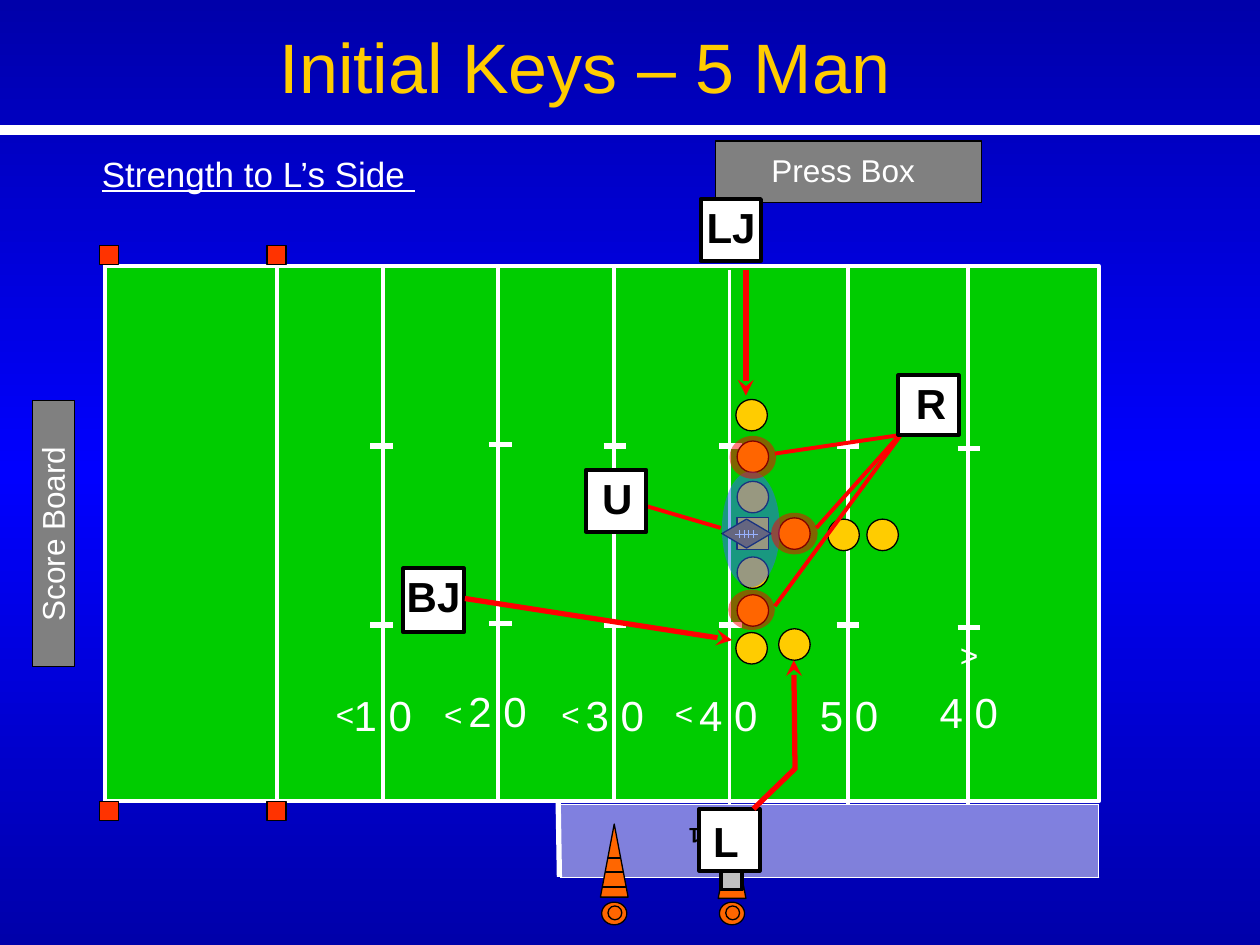
import copy

import pptx
import pptx.dml.color
import pptx.enum.dml
import pptx.enum.shapes
import pptx.enum.text
import pptx.oxml.ns
import pptx.util
from lxml import etree

SHAPE = pptx.enum.shapes.MSO_SHAPE
ALIGN = pptx.enum.text.PP_ALIGN
WHITE, BLACK, RED, GRAY = "FFFFFF", "000000", "FF0000", "808080"
GOLD, ORANGE, PYLON, GREEN = "FFCC00", "FF6600", "FF3300", "00CC00"
BLUE, BALL, SILVER = "3366FF", "996600", "C0C0C0"

BACKGROUND = [(0, "0000AA"), (0.5, "0000FF"), (1, "0000AA")]
FIELD = (0.83, 2.11, 7.89, 4.25)
YARD_LINES = [(2.2, 2.11), (3.04, 2.11), (3.95, 2.11), (4.87, 2.11),
              (5.79, 2.14), (6.73, 2.13), (7.68, 2.13)]
YARD_NUMBERS = [("1 0", 2.61, 5.42), ("2 0", 3.52, 5.39), ("3 0", 4.45, 5.42),
                ("4 0", 5.35, 5.42), ("5 0", 6.31, 5.42), ("4 0", 7.26, 5.4)]
HASH_MARKS = [(2.94, 3.54), (3.88, 3.53), (4.79, 3.54),
              (5.71, 3.54), (6.64, 3.54), (7.6, 3.56)]
DIRECTION_MARKS = [(2.56, 5.47, 0), (3.42, 5.47, 0), (4.35, 5.47, 0),
                   (5.25, 5.46, 0), (7.52, 5.03, 180)]
CONES = [(5.81, 6.55, (6.93, 7.04)), (4.875, 6.54, (6.81, 6.92, 7.04))]
OFFICIALS = [("U", (4.65, 3.73, 0.48, 0.49), (4.68, 3.7)),
             (" L", (5.55, 6.42, 0.48, 0.49), (5.47, 6.42)),
             ("LJ", (5.56, 1.58, 0.48, 0.49), (5.51, 1.55)),
             ("BJ", (3.2, 4.51, 0.48, 0.51), (3.13, 4.48)),
             ("R", (7.13, 2.98, 0.48, 0.47), (7.17, 2.95))]
PLAYERS = [(5.85, 3.82), (5.85, 3.5), (5.85, 4.42), (5.85, 4.72), (6.18, 4.11),
           (6.18, 4.99), (5.84, 5.02), (5.84, 3.17), (6.88, 4.12), (6.57, 4.12)]
KEY_AREAS = [((5.78, 4.68, 0.37, 0.32), RED), ((5.73, 3.74, 0.46, 0.92), BLUE),
             ((5.79, 3.46, 0.37, 0.34), RED), ((6.12, 4.07, 0.37, 0.33), RED)]
KEY_LINES = [((6.15, 4.81), (7.16, 3.44)), ((6.48, 4.19), (7.15, 3.44)),
             ((5.14, 4.02), (5.72, 4.19)), ((6.15, 3.6), (7.16, 3.45))]
KEY_ARROWS = [((3.69, 4.75), (5.81, 5.08)), ((6.31, 6.11), (6.3, 5.24)),
              ((5.92, 2.14), (5.92, 3.14))]


def color(hex_code):
    return pptx.dml.color.RGBColor.from_string(hex_code)


def inches(*values):
    return [pptx.util.Cm(value * 2.54) for value in values]


def add_box(kind, box, fill, line=BLACK, width=0.75, alpha=None):
    shape = slide.shapes.add_shape(kind, *inches(*box))
    shape.shadow.inherit = False
    if fill:
        shape.fill.solid()
        shape.fill.fore_color.rgb = color(fill)
    else:
        shape.fill.background()
    if alpha:
        fill_color = shape.element.spPr.find(".//" + pptx.oxml.ns.qn("a:srgbClr"))
        etree.SubElement(fill_color, pptx.oxml.ns.qn("a:alpha"), val=str(alpha * 1000))
    if line:
        shape.line.color.rgb = color(line)
        shape.line.width = pptx.util.Pt(width)
    else:
        shape.line.fill.background()
    return shape


def add_line(start, end, line=WHITE, width=2.25, arrow=False):
    connector = slide.shapes.add_connector(
        pptx.enum.shapes.MSO_CONNECTOR.STRAIGHT, *inches(*start, *end))
    connector.line.color.rgb = color(line)
    connector.line.width = pptx.util.Pt(width)
    if arrow:
        outline = connector.element.spPr.find(pptx.oxml.ns.qn("a:ln"))
        etree.SubElement(outline, pptx.oxml.ns.qn("a:tailEnd"), type="stealth")
    etree.SubElement(connector.element.spPr, pptx.oxml.ns.qn("a:effectLst"))


def write(shape, text, size, ink=WHITE, align=ALIGN.LEFT, bold=False, underline=False):
    frame = shape.text_frame
    frame.word_wrap = True
    frame.auto_size = pptx.enum.text.MSO_AUTO_SIZE.NONE
    frame.vertical_anchor = pptx.enum.text.MSO_ANCHOR.TOP
    paragraph = frame.paragraphs[0]
    paragraph.alignment = align
    run = paragraph.add_run()
    run.text = text
    run.font.name = "Arial"
    run.font.size = pptx.util.Pt(size)
    run.font.color.rgb = color(ink)
    run.font.bold = bold
    run.font.underline = underline


def add_text(text, box, size, rotation=0, **style):
    shape = slide.shapes.add_textbox(*inches(*box))
    shape.rotation = rotation
    write(shape, text, size, **style)


def add_background():
    fill = slide.background.fill
    fill.gradient()
    fill.gradient_angle = 270
    stop_list = slide.element.xpath(".//a:gsLst")[0]
    stop_list.append(copy.deepcopy(stop_list[-1]))
    for stop, (position, hex_code) in zip(fill.gradient_stops, BACKGROUND):
        stop.position = position
        stop.color.rgb = color(hex_code)


def add_field():
    add_box(SHAPE.RECTANGLE, FIELD, GREEN, WHITE, 2.25)
    left, top, width, height = FIELD
    for x, y in YARD_LINES:
        add_line((x, y), (x, y + height))
    for x in (2.12, 0.79):
        for y in (1.95, top + height):
            add_box(SHAPE.RECTANGLE, (x, y, 0.15, 0.15), PYLON)
    for number, x, y in YARD_NUMBERS:
        add_text(number, (x, y, 0.76, 0.5), 24, align=ALIGN.RIGHT)
    add_line((4.43, 6.36), (4.44, 6.96), width=3)
    bench = add_box(SHAPE.RECTANGLE, (4.44, 6.38, 4.28, 0.58), WHITE, WHITE, 0.25, alpha=50)
    bench.line.dash_style = pptx.enum.dml.MSO_LINE.ROUND_DOT
    for x, y in HASH_MARKS:
        for mark_y in (y, y + 1.42):
            add_line((x, mark_y), (x + 0.18, mark_y), width=3)
    for x, y, rotation in DIRECTION_MARKS:
        add_text("<", (x, y, 0.35, 0.4), 18, rotation, align=ALIGN.RIGHT)


def add_cone(center, top, bands):
    add_box(SHAPE.ISOSCELES_TRIANGLE, (center - 0.11, top, 0.22, 0.58), ORANGE)
    add_box(SHAPE.OVAL, (center - 0.1, 7.16, 0.2, 0.18), ORANGE)
    for y in bands:
        half = 0.11 * (y - top) / 0.58
        add_line((center - half, y), (center + half, y), BLACK, 0.75)
    add_box(SHAPE.OVAL, (center - 0.05, 7.19, 0.11, 0.11), None)


def add_ball():
    add_box(SHAPE.FLOWCHART_DECISION, (5.73, 4.12, 0.39, 0.23), BALL)
    add_line((5.83, 4.24), (6.02, 4.24), width=0.75)
    for x in (5.87, 5.91, 5.94, 5.98):
        add_line((x, 4.21), (x, 4.27), width=0.75)


presentation = pptx.Presentation()
presentation.slide_width, presentation.slide_height = inches(10, 7.5)
slide = presentation.slides.add_slide(presentation.slide_layouts[5])
add_background()

title = slide.shapes.title
title.left, title.top, title.width, title.height = inches(2.12, 0.14, 6.15, 0.77)
write(title, "Initial Keys – 5 Man", 40, GOLD)

add_box(SHAPE.RECTANGLE, (5.68, 1.12, 2.11, 0.49), GRAY)
add_text("Press Box", (5.92, 1.15, 1.44, 0.4), 18, align=ALIGN.RIGHT)
add_line((0, 1.03), (10, 1.03), width=6)
add_text("Strength to L’s Side ", (0.71, 1.16, 3, 0.45), 20, underline=True)
add_field()
for cone in CONES:
    add_cone(*cone)
add_box(SHAPE.RECTANGLE, (5.72, 6.85, 0.17, 0.21), SILVER, width=2.25)
add_text("1", (5.37, 6.49, 0.29, 0.3), 12, 180, ink=BLACK, bold=True)
add_box(SHAPE.RECTANGLE, (0.26, 3.18, 0.33, 2.11), GRAY)
add_text("Score Board", (-0.48, 4.14, 1.79, 0.4), 18, 270, align=ALIGN.RIGHT)

add_box(SHAPE.RECTANGLE, (5.85, 4.11, 0.25, 0.25), GOLD)
for x, y in PLAYERS:
    add_box(SHAPE.OVAL, (x, y, 0.25, 0.25), GOLD)
add_ball()
for box, fill in KEY_AREAS:
    add_box(SHAPE.OVAL, box, fill, None, alpha=50)
for start, end in KEY_LINES:
    add_line(start, end, RED)
for name, box, (x, y) in OFFICIALS:
    add_box(SHAPE.RECTANGLE, box, WHITE, width=2.25)
    add_text(name, (x, y, 0.7, 0.5), 24, ink=BLACK, bold=True)
add_line((5.98, 6.42), (6.31, 6.1), RED, 3)
for start, end in KEY_ARROWS:
    add_line(start, end, RED, 3, arrow=True)

presentation.save("out.pptx")
